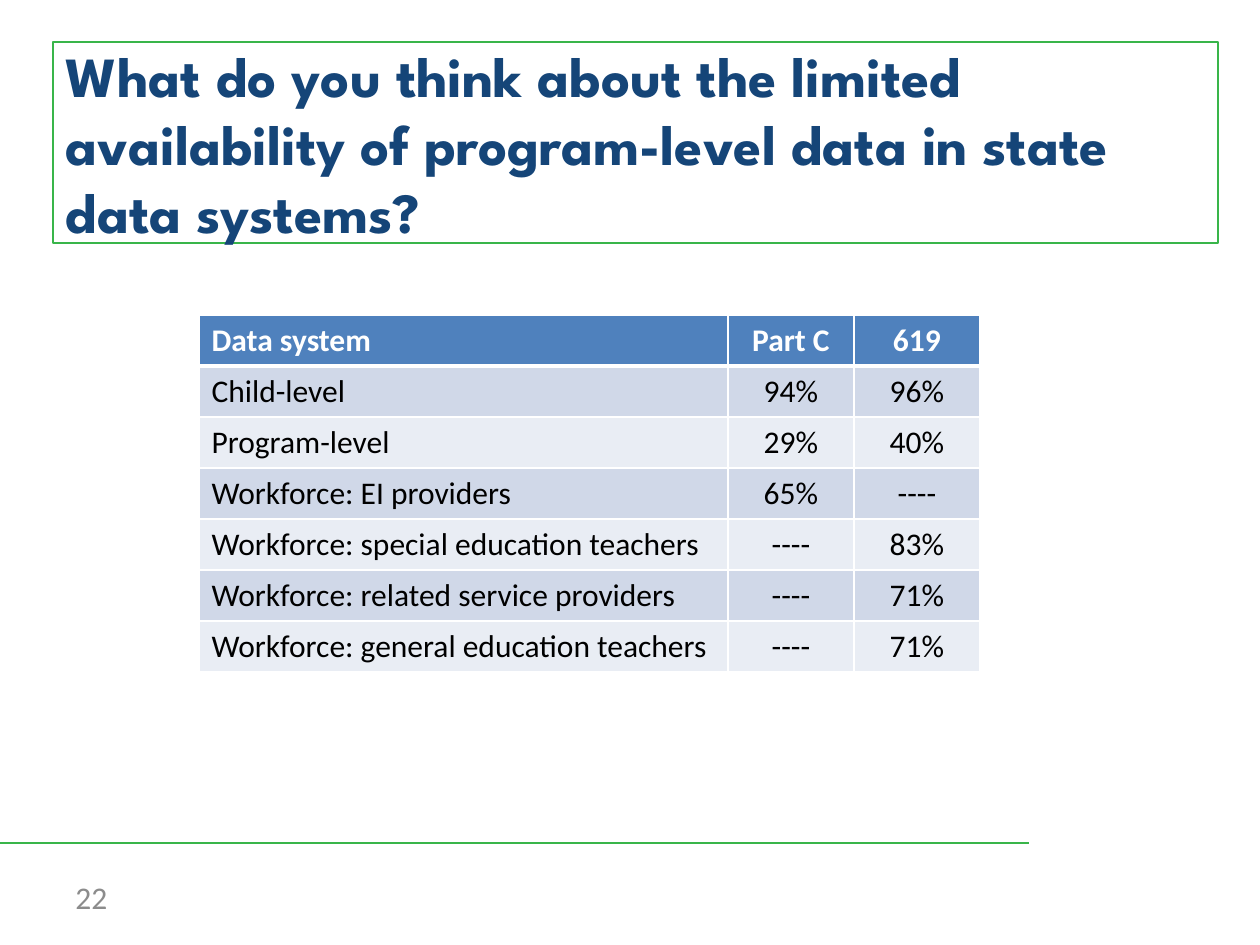
from dataclasses import dataclass

from lxml.etree import SubElement
from pptx import Presentation
from pptx.dml.color import RGBColor
from pptx.enum.shapes import MSO_CONNECTOR
from pptx.enum.text import MSO_ANCHOR, MSO_AUTO_SIZE, PP_ALIGN
from pptx.oxml import parse_xml
from pptx.oxml.ns import nsdecls, qn
from pptx.util import Pt

TITLE = ("What do you think about the limited availability of "
         "program-level data in state data systems?")
PAGE_NUMBER = "22"
ROWS = [
    ("Data system", "Part C", "619"),
    ("Child-level", "94%", "96%"),
    ("Program-level", "29%", "40%"),
    ("Workforce: EI providers", "65%", "----"),
    ("Workforce: special education teachers", "----", "83%"),
    ("Workforce: related service providers", "----", "71%"),
    ("Workforce: general education teachers", "----", "71%"),
]


@dataclass(frozen=True)
class Theme:
    title_font: str = "League Spartan"
    body_font: str = "Calibri"
    title_size: float = 32.4
    body_size: float = 18
    title: str = "154578"
    accent: str = "39B54A"
    muted: str = "8C8C8C"
    header: str = "4F81BD"
    bands: tuple = ("D0D8E8", "E9EDF4")
    light: str = "FFFFFF"
    dark: str = "000000"


THEME = Theme()
PX = 914400 // 126
SLIDE = (1260, 945)
TITLE_BOX = (53, 42, 1165, 201)
NUMBER_BOX = (63, 872, 294, 50)
RULE_Y, RULE_END = 843, 1029
TABLE_LEFT, TABLE_TOP = 199, 315
COLUMN_WIDTHS = (529, 126, 126)
ROW_HEIGHT = 51


def scaled(*lengths):
    return [length * PX for length in lengths]


def style_font(para, name, size, color, bold=False):
    para.font.name = name
    para.font.size = Pt(size)
    para.font.bold = bold
    para.font.color.rgb = RGBColor.from_string(color)


def add_title(page):
    box = page.shapes.title
    box.left, box.top, box.width, box.height = scaled(*TITLE_BOX)
    box.line.color.rgb = RGBColor.from_string(THEME.accent)
    box.line.width = Pt(1)
    frame = box.text_frame
    frame.text = TITLE
    frame.word_wrap = True
    frame.auto_size = MSO_AUTO_SIZE.NONE
    frame.vertical_anchor = MSO_ANCHOR.MIDDLE
    para = frame.paragraphs[0]
    para.alignment = PP_ALIGN.LEFT
    style_font(para, THEME.title_font, THEME.title_size, THEME.title, True)


def add_rule(page):
    rule = page.shapes.add_connector(
        MSO_CONNECTOR.STRAIGHT, *scaled(0, RULE_Y, RULE_END, RULE_Y))
    rule.line.color.rgb = RGBColor.from_string(THEME.accent)
    rule.line.width = Pt(1.5)
    SubElement(rule._element.spPr, qn("a:effectLst"))


def add_page_number(page):
    frame = page.shapes.add_textbox(*scaled(*NUMBER_BOX)).text_frame
    frame.text = PAGE_NUMBER
    frame.word_wrap = True
    frame.vertical_anchor = MSO_ANCHOR.MIDDLE
    style_font(frame.paragraphs[0], THEME.body_font, THEME.body_size, THEME.muted)


def set_borders(cell, is_header, below_header):
    widths = {"lnL": 1, "lnR": 1, "lnT": 3 if below_header else 1,
              "lnB": 3 if is_header else 1}
    for index, (side, width) in enumerate(widths.items()):
        border = parse_xml(
            f'<a:{side} {nsdecls("a")} w="{Pt(width)}"><a:solidFill>'
            f'<a:srgbClr val="{THEME.light}"/></a:solidFill></a:{side}>')
        cell._tc.get_or_add_tcPr().insert(index, border)


def add_data_table(page):
    size = (sum(COLUMN_WIDTHS), ROW_HEIGHT * len(ROWS))
    table = page.shapes.add_table(
        len(ROWS), len(COLUMN_WIDTHS),
        *scaled(TABLE_LEFT, TABLE_TOP, *size)).table
    for column, width in zip(table.columns, scaled(*COLUMN_WIDTHS)):
        column.width = width
    for row_index, values in enumerate(ROWS):
        is_header = row_index == 0
        fill = THEME.header if is_header else THEME.bands[(row_index - 1) % 2]
        color = THEME.light if is_header else THEME.dark
        for column_index, value in enumerate(values):
            cell = table.cell(row_index, column_index)
            cell.text = value
            cell.fill.solid()
            cell.fill.fore_color.rgb = RGBColor.from_string(fill)
            set_borders(cell, is_header, row_index == 1)
            para = cell.text_frame.paragraphs[0]
            para.alignment = PP_ALIGN.CENTER if column_index else PP_ALIGN.LEFT
            style_font(para, THEME.body_font, THEME.body_size, color, is_header)


def main():
    deck = Presentation()
    deck.slide_width, deck.slide_height = scaled(*SLIDE)
    page = deck.slides.add_slide(deck.slide_layouts[5])
    add_title(page)
    add_rule(page)
    add_page_number(page)
    add_data_table(page)
    deck.save("out.pptx")


if __name__ == "__main__":
    main()
